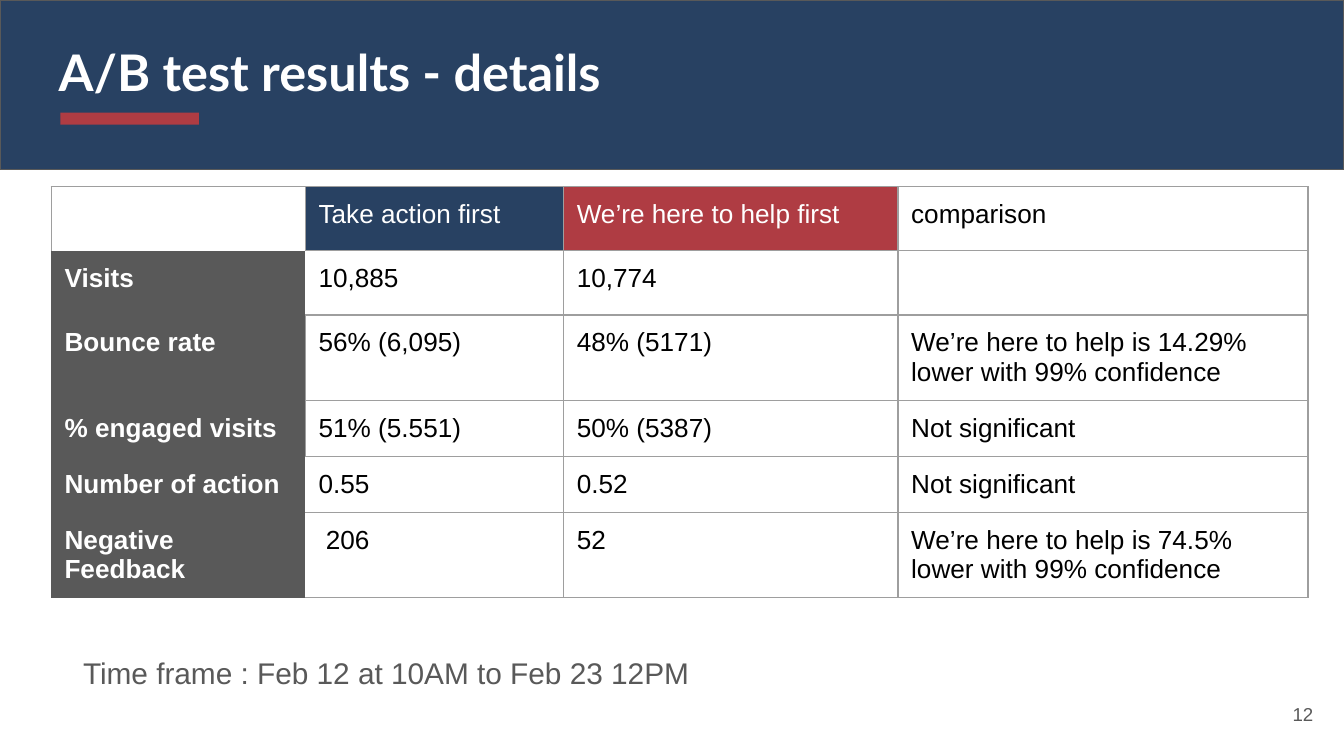
import pptx
import pptx.util
import pptx.oxml
import pptx.dml.color
import pptx.enum.shapes
import pptx.enum.text
from pptx.oxml.ns import nsdecls

Cm, Pt = pptx.util.Cm, pptx.util.Pt
RGB = pptx.dml.color.RGBColor
Align, Anchor = pptx.enum.text.PP_ALIGN, pptx.enum.text.MSO_ANCHOR

NAVY = RGB(0x28, 0x41, 0x62)
RED = RGB(0xAF, 0x3C, 0x43)
GREY = RGB(0x59, 0x59, 0x59)
RULE = RGB(0x9E, 0x9E, 0x9E)
WHITE = RGB(0xFF, 0xFF, 0xFF)
BLACK = RGB(0, 0, 0)
PAD = Cm(0.25)

HEADS = ["", "Take action first", "We’re here to help first", "comparison"]
ROWS = [
    ["Visits", "10,885", "10,774", ""],
    ["Bounce rate", "56% (6,095)", "48% (5171)",
     "We’re here to help is 14.29% lower with 99% confidence"],
    ["% engaged visits", "51% (5.551)", "50% (5387)", "Not significant"],
    ["Number of action", "0.55", "0.52", "Not significant"],
    ["Negative Feedback", " 206", "52",
     "We’re here to help is 74.5% lower with 99% confidence"],
]
WIDTHS = [4.8, 4.88, 6.32, 7.75]
LOW, TALL = 1.06, 1.61
HEIGHTS = [LOW, LOW, TALL, LOW, LOW, TALL]
RULED = (2, 3)  # rows with a rule between label and value


def write(frame, text, size=14, font="Arial", color=BLACK, bold=False, align=Align.LEFT):
    para = frame.paragraphs[0]
    para.alignment = align
    run = para.add_run()
    run.text = text
    run.font.size, run.font.name = Pt(size), font
    run.font.color.rgb, run.font.bold = color, bold


def sides(row, col):
    """Letters of the cell sides that carry a rule."""
    if col == 0:
        return "LRT" if row == 0 else "R" if row in RULED else ""
    if col == 1 and row > 0 and row not in RULED:
        return "RTB"
    return "LRTB"


def look(row, col):
    """Fill and text colour of a table cell."""
    if row == 0:
        return {1: (NAVY, WHITE), 2: (RED, WHITE)}.get(col, (None, BLACK))
    return (GREY, WHITE) if col == 0 else (None, BLACK)


class Page:
    def __init__(self, deck):
        self.slide = deck.slides.add_slide(deck.slide_layouts[5])
        self.shapes = self.slide.shapes

    def frame(self, shape, anchor=Anchor.TOP):
        frame = shape.text_frame
        frame.word_wrap = True
        frame.auto_size = pptx.enum.text.MSO_AUTO_SIZE.NONE
        frame.vertical_anchor = anchor
        frame.margin_left = frame.margin_right = PAD
        frame.margin_top = frame.margin_bottom = PAD
        return frame

    def title(self, text, x, y, w, h, **style):
        box = self.shapes.title
        box.left, box.top, box.width, box.height = Cm(x), Cm(y), Cm(w), Cm(h)
        write(self.frame(box), text, **style)

    def bar(self, x, y, w, h, fill, line=None):
        kind = pptx.enum.shapes.MSO_SHAPE.RECTANGLE
        bar = self.shapes.add_shape(kind, Cm(x), Cm(y), Cm(w), Cm(h))
        bar.shadow.inherit = False
        bar.fill.solid()
        bar.fill.fore_color.rgb = fill
        if line is None:
            bar.line.fill.background()
        else:
            bar.line.color.rgb, bar.line.width = line, Pt(0.75)
        return bar

    def text(self, text, x, y, w, h, anchor=Anchor.TOP, **style):
        box = self.shapes.add_textbox(Cm(x), Cm(y), Cm(w), Cm(h))
        write(self.frame(box, anchor), text, **style)

    def edge(self, cell, drawn):
        props = cell._tc.get_or_add_tcPr()
        for side in "LRTB":
            fill = (f'<a:solidFill><a:srgbClr val="{RULE}"/></a:solidFill>'
                    if side in drawn else "<a:noFill/>")
            props.append(pptx.oxml.parse_xml(
                f'<a:ln{side} {nsdecls("a")} w="{Pt(0.75)}">{fill}</a:ln{side}>'))

    def table(self, x, y, data):
        table = self.shapes.add_table(
            len(data), len(WIDTHS), Cm(x), Cm(y),
            Cm(sum(WIDTHS)), Cm(sum(HEIGHTS))).table
        table.first_row = table.horz_banding = False
        for col, width in zip(table.columns, WIDTHS):
            col.width = Cm(width)
        for row, height in zip(table.rows, HEIGHTS):
            row.height = Cm(height)
        for r, texts in enumerate(data):
            for c, text in enumerate(texts):
                cell = table.cell(r, c)
                cell.margin_left = cell.margin_right = PAD
                cell.margin_top = cell.margin_bottom = PAD
                self.edge(cell, sides(r, c))
                fill, color = look(r, c)
                if fill is None:
                    cell.fill.background()
                else:
                    cell.fill.solid()
                    cell.fill.fore_color.rgb = fill
                write(cell.text_frame, text, color=color, bold=r > 0 and c == 0)


def main():
    deck = pptx.Presentation()
    deck.slide_width, deck.slide_height = Cm(25.4), Cm(14.29)
    page = Page(deck)

    # Header: the band goes behind the title
    band = page.bar(0, 0, 25.4, 3.2, NAVY, GREY)
    page.shapes.title.element.addprevious(band.element)
    page.title("A/B test results - details", 0.86, 0.53, 23.6, 1.6,
               size=27, font="Lato", color=WHITE, bold=True)
    page.bar(1.14, 2.13, 2.62, 0.23, RED)

    # Results
    page.table(0.97, 3.53, [HEADS] + ROWS)

    # Footer
    page.text("Time frame : Feb 12 at 10AM to Feb 23 12PM",
              1.32, 12.12, 22.15, 0.97, size=16, color=GREY)
    page.text("12", 23.55, 12.95, 1.52, 1.09, anchor=Anchor.MIDDLE,
              size=10, color=GREY, align=Align.RIGHT)

    deck.save("out.pptx")


if __name__ == "__main__":
    main()
